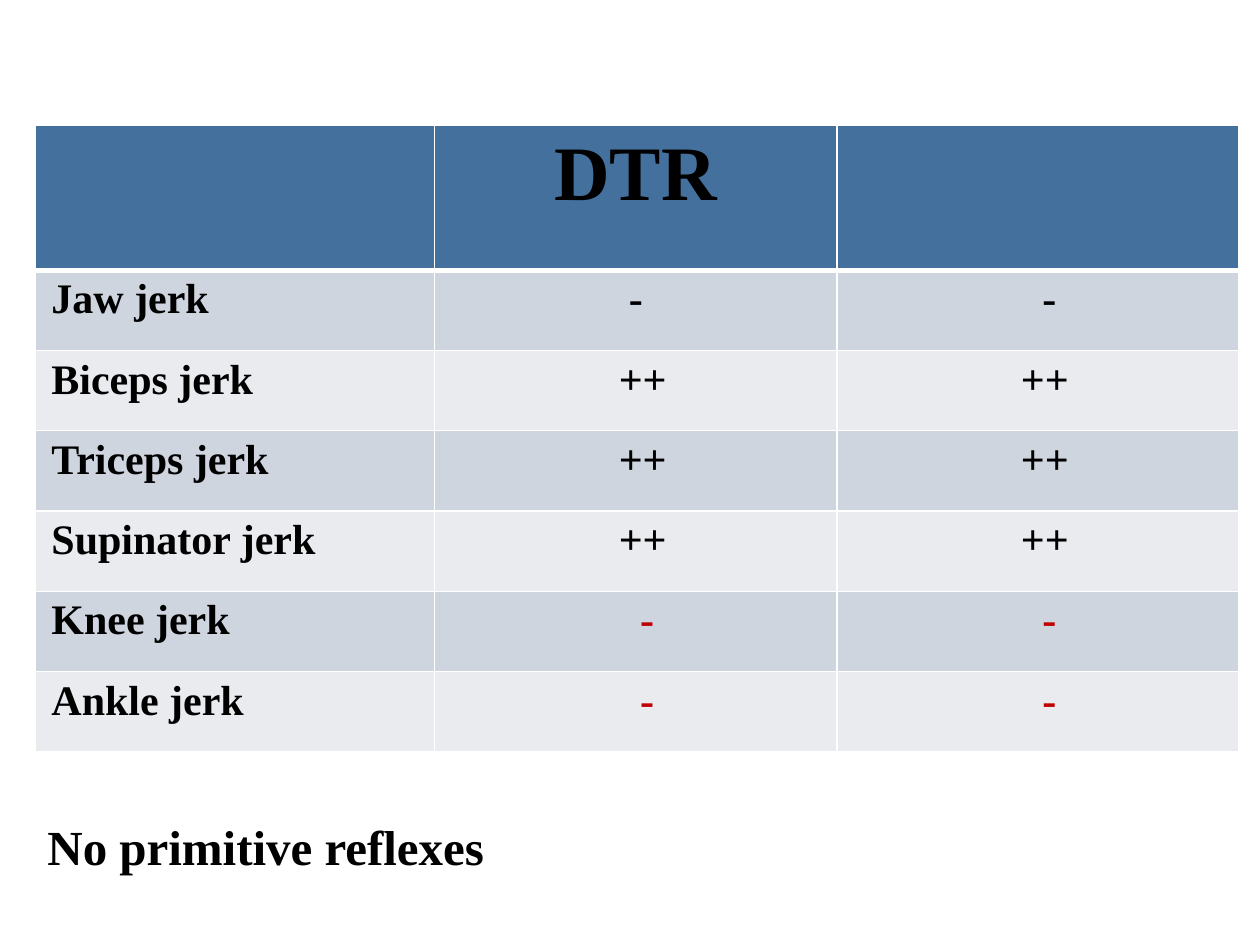
from lxml import etree
from pptx import Presentation
from pptx import util as u
from pptx.dml import color
from pptx.enum import text
from pptx.oxml import ns

Pt = u.Pt
FONT = "Times New Roman"
BLACK, RED, WHITE = "000000", "C00000", "FFFFFF"
HEADER, BANDS = "44709D", ("CFD5DF", "E9EBEF")
PAD = 9.4
NUDGE = {"-": 13, "++": 8}
REFLEXES = [
    ("Jaw jerk", "-", "-", BLACK),
    ("Biceps jerk", "++", "++", BLACK),
    ("Triceps jerk", "++", "++", BLACK),
    ("Supinator jerk", "++", "++", BLACK),
    ("Knee jerk", "-", "-", RED),
    ("Ankle jerk", "-", "-", RED),
]


def rgb(hex_color):
    """Turn a hex string into a colour."""
    return color.RGBColor.from_string(hex_color)


def style(p, size, hex_color=BLACK):
    """Set the bold serif font of a paragraph."""
    p.font.name, p.font.size, p.font.bold = FONT, Pt(size), True
    p.font.color.rgb = rgb(hex_color)


def add_borders(cell, bottom):
    """Draw white lines on the four sides of a cell."""
    tc_pr = cell._tc.get_or_add_tcPr()
    for side, width in (("L", 1), ("R", 1), ("T", 1), ("B", bottom)):
        ln = etree.SubElement(tc_pr, ns.qn(f"a:ln{side}"), w=str(Pt(width)))
        fill = etree.SubElement(ln, ns.qn("a:solidFill"))
        etree.SubElement(fill, ns.qn("a:srgbClr"), val=WHITE)


def fill_cell(cell, words, fill, size=24, hex_color=BLACK, centred=True, nudge=0, bottom=1):
    """Give a cell its lines, fill and text."""
    add_borders(cell, bottom)
    cell.fill.solid()
    cell.fill.fore_color.rgb = rgb(fill)
    cell.margin_left, cell.margin_right = Pt(PAD + nudge), Pt(PAD)
    p = cell.text_frame.paragraphs[0]
    p.text = words
    p.alignment = text.PP_ALIGN.CENTER if centred else text.PP_ALIGN.LEFT
    style(p, size, hex_color)


def add_reflex_table(s, left, top, width, height, header_height=82.8):
    """Place the table of tendon reflexes in a box."""
    frame = s.shapes.add_table(len(REFLEXES) + 1, 3, Pt(left), Pt(top), Pt(width), Pt(height))
    table = frame.table
    first = 228.4
    for i, col in enumerate(table.columns):
        col.width = Pt((width - first) / 2 if i else first)
    for i, row in enumerate(table.rows):
        row.height = Pt((height - header_height) / len(REFLEXES) if i else header_height)
    for col, words in enumerate(("", "DTR", "")):
        fill_cell(table.cell(0, col), words, HEADER, size=44, bottom=3)
    for i, (name, left_sign, right_sign, sign_color) in enumerate(REFLEXES):
        band = BANDS[i % 2]
        fill_cell(table.cell(i + 1, 0), name, band, centred=False)
        for col, sign in enumerate((left_sign, right_sign), 1):
            nudge = 0 if (i, col) == (0, 1) else NUDGE[sign]
            fill_cell(table.cell(i + 1, col), sign, band, hex_color=sign_color, nudge=nudge)


def add_note(s, left, top, width, height):
    """Place the closing remark in a box."""
    tf = s.shapes.add_textbox(Pt(left), Pt(top), Pt(width), Pt(height)).text_frame
    tf.word_wrap = True
    tf.auto_size = text.MSO_AUTO_SIZE.SHAPE_TO_FIT_TEXT
    p = tf.paragraphs[0]
    p.text = "No primitive reflexes"
    style(p, 28)


def main():
    """Build and save the slide."""
    prs = Presentation()
    prs.slide_width, prs.slide_height = Pt(720), Pt(540)
    s = prs.slides.add_slide(prs.slide_layouts[6])
    add_reflex_table(s, 20, 71.6, 688, 358)
    add_note(s, 20, 463, 680, 41)
    prs.save("out.pptx")


if __name__ == "__main__":
    main()
